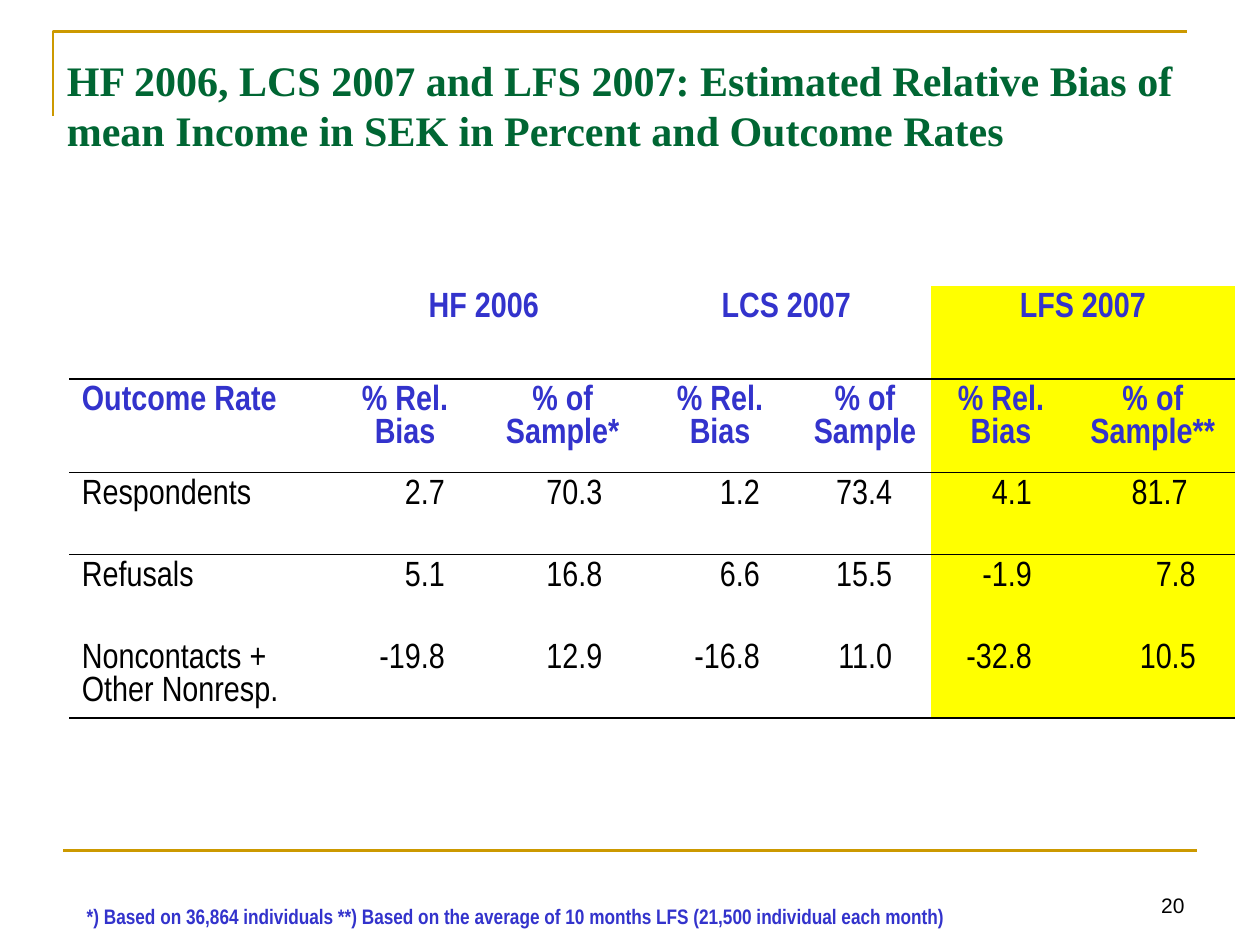
import pptx
import pptx.util
import pptx.dml.color
import pptx.enum.shapes
import pptx.enum.text
import pptx.oxml
import pptx.oxml.ns
import lxml.etree

Pt = pptx.util.Pt
RGB = pptx.dml.color.RGBColor.from_string
AL = pptx.enum.text.PP_ALIGN
ANC = pptx.enum.text.MSO_ANCHOR
THEME = {
    "gold": "CC9900", "yellow": "FFFF00", "rule": "000000",
    "title": {"name": "Times New Roman", "size": Pt(24), "bold": True, "color": "006633"},
    "head": {"name": "Arial Narrow", "size": Pt(20), "bold": True, "color": "3333CC"},
    "cell": {"name": "Arial Narrow", "size": Pt(20), "bold": False, "color": "000000"},
    "note": {"name": "Arial Narrow", "size": Pt(12), "bold": True, "color": "3333CC"},
    "number": {"name": "Arial", "size": Pt(12), "bold": False, "color": "000000"},
}


def write(tf, text, style, align=AL.LEFT):
    p = tf.paragraphs[0]
    p.alignment = align
    r = p.add_run()
    r.text = text
    for key, value in THEME[style].items():
        if key == "color":
            r.font.color.rgb = RGB(value)
        else:
            setattr(r.font, key, value)


def border(cell, side):
    ln = pptx.oxml.parse_xml(
        f'<a:{side} {pptx.oxml.ns.nsdecls("a")} w="12700"><a:solidFill>'
        f'<a:srgbClr val="{THEME["rule"]}"/></a:solidFill></a:{side}>')
    tcPr = cell._tc.get_or_add_tcPr()
    tcPr.insert(1 if side == "lnB" and len(tcPr) and tcPr[0].tag.endswith("lnT") else 0, ln)


prs = pptx.Presentation()
prs.slide_width, prs.slide_height = Pt(720), Pt(540)
s = prs.slides.add_slide(prs.slide_layouts[5])

fb = s.shapes.build_freeform(Pt(30.24), Pt(66.24))
fb.add_line_segments([(Pt(30.24), Pt(18)), (Pt(678.24), Pt(18))], close=False)
corner = fb.convert_to_shape()
corner.fill.background()
corner.shadow.inherit = False
rule = s.shapes.add_connector(pptx.enum.shapes.MSO_CONNECTOR.STRAIGHT, Pt(36), Pt(486), Pt(684), Pt(486))
lxml.etree.SubElement(rule._element.spPr, pptx.oxml.ns.qn("a:effectLst"))
for sp in (corner, rule):
    sp.line.color.rgb = RGB(THEME["gold"])
    sp.line.width = Pt(1.5)

title = s.shapes.title
title.left, title.top, title.width, title.height = Pt(31), Pt(26), Pt(652.5), Pt(67.7)
tf = title.text_frame
tf.auto_size = pptx.enum.text.MSO_AUTO_SIZE.NONE
tf.vertical_anchor = ANC.MIDDLE
write(tf, "HF 2006, LCS 2007 and LFS 2007: Estimated Relative Bias of mean Income "
      "in SEK in Percent and Outcome Rates", "title")

rows = [
    ["", "HF 2006", "", "LCS 2007", "", "LFS 2007", ""],
    ["Outcome Rate", "% Rel. Bias", "% of Sample*", "% Rel. Bias", "% of Sample", "% Rel. Bias", "% of Sample**"],
    ["Respondents", "2.7", "70.3", "1.2", "73.4", "4.1", "81.7"],
    ["Refusals", "5.1", "16.8", "6.6", "15.5", "-1.9", "7.8"],
    ["Noncontacts + Other Nonresp.", "-19.8", "12.9", "-16.8", "11.0", "-32.8", "10.5"],
]
widths = [146.9, 90, 90, 90, 75.6, 79.9, 93.6]
heights = [53.4, 53.4, 46.8, 46.8, 46.8]
tb = s.shapes.add_table(len(rows), len(widths), Pt(39.6), Pt(163.2), Pt(sum(widths)), Pt(sum(heights))).table
tb.first_row = tb.horz_banding = False
tb._tbl.tblPr[0].text = "{2D5ABB26-0587-4C30-8999-92F81FD0307C}"
for col, width in zip(tb.columns, widths):
    col.width = Pt(width)
for row, height in zip(tb.rows, heights):
    row.height = Pt(height)
for c in (1, 3, 5):
    tb.cell(0, c).merge(tb.cell(0, c + 1))

for i, texts in enumerate(rows):
    for j, text in enumerate(texts):
        cell = tb.cell(i, j)
        if i in (1, 2):
            border(cell, "lnT")
        if i in (0, 1, 4):
            border(cell, "lnB")
        if j >= 5:
            cell.fill.solid()
            cell.fill.fore_color.rgb = RGB(THEME["yellow"])
        else:
            cell.fill.background()
        if i >= 2 and j:
            cell.margin_right = Pt(27 if text == "81.7" else 22.3)
        if text:
            align = AL.LEFT if j == 0 else AL.CENTER if i < 2 else AL.RIGHT
            write(cell.text_frame, text, "head" if i < 2 else "cell", align)

for box, text, style, align in [
    ((516.2, 491.8, 167.8, 36), "20", "number", AL.RIGHT),
    ((42.5, 491, 561.6, 43.2), "*) Based on 36,864 individuals **) Based on the average of 10 months LFS "
     "(21,500 individual each month)", "note", AL.LEFT),
]:
    tf = s.shapes.add_textbox(*map(Pt, box)).text_frame
    tf.word_wrap = True
    tf.vertical_anchor = ANC.BOTTOM
    write(tf, text, style, align)

prs.save("out.pptx")
